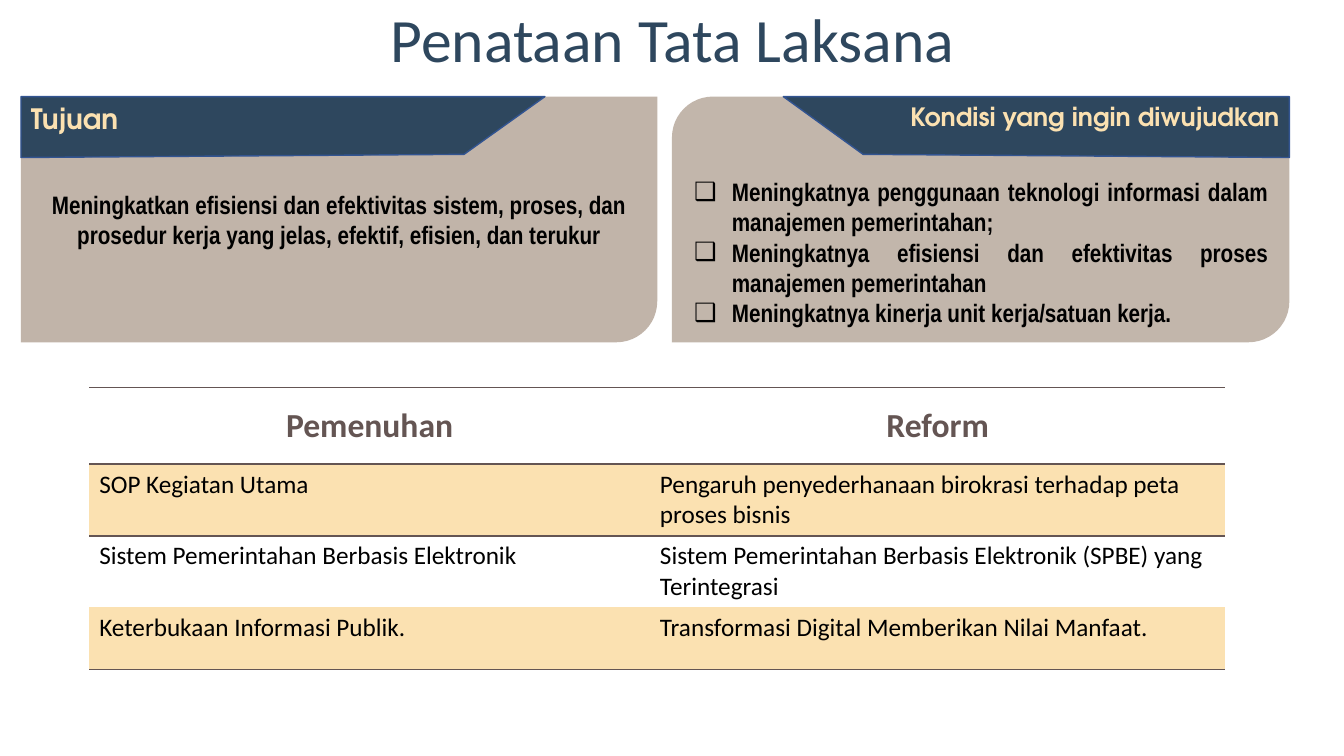
from lxml.etree import SubElement
from pptx import Presentation
from pptx.dml.color import RGBColor
from pptx.enum.shapes import MSO_SHAPE as Shape
from pptx.enum.text import MSO_ANCHOR as Anchor, MSO_AUTO_SIZE as AutoSize, PP_ALIGN as Align
from pptx.oxml.ns import qn
from pptx.util import Pt

PX = 9525  # EMU in one pixel
NAVY, CREAM, TAUPE, BROWN = "2E475E", "FBE1B1", "89705C", "645553"
BLUE, BLACK = "325491", "000000"
PANEL_TOP, PANEL_HEIGHT = 92, 234

GOALS = "Meningkatkan efisiensi dan efektivitas sistem, proses, dan prosedur kerja yang jelas, efektif, efisien, dan terukur"
CONDITIONS = [
    "Meningkatnya penggunaan teknologi informasi dalam manajemen pemerintahan;",
    "Meningkatnya efisiensi dan efektivitas proses manajemen pemerintahan",
    "Meningkatnya kinerja unit kerja/satuan kerja.",
]
ROWS = [
    ("Pemenuhan", "Reform"),
    ("SOP Kegiatan Utama", "Pengaruh penyederhanaan birokrasi terhadap peta proses bisnis"),
    ("Sistem Pemerintahan Berbasis Elektronik", "Sistem Pemerintahan Berbasis Elektronik (SPBE) yang Terintegrasi"),
    ("Keterbukaan Informasi Publik.", "Transformasi Digital Memberikan Nilai Manfaat."),
]
COLUMN_WIDTHS = [534, 548]
ROW_HEIGHTS = [73, 67, 67, 59]
RULE_WIDTHS = {0: 1, 1: 1, 2: 1.5, 4: 1}  # horizontal edge number: points


def color(value):
    return RGBColor.from_string(value)


def place(shape, left, top, width, height):
    shape.left, shape.top = left * PX, top * PX
    shape.width, shape.height = width * PX, height * PX


def style(paragraph, font_name, size, text_color, bold=False, align=Align.LEFT):
    paragraph.alignment = align
    font = paragraph.font
    font.name, font.size, font.bold = font_name, Pt(size), bold
    font.color.rgb = color(text_color)


def add_title(slide, text):
    title = slide.shapes.title
    place(title, 359, -4, 563, 81)
    frame = title.text_frame
    frame.text = text
    frame.word_wrap = False
    frame.auto_size = AutoSize.NONE
    frame.vertical_anchor = Anchor.TOP
    style(frame.paragraphs[0], "Calibri", 44, NAVY, align=Align.CENTER)


def add_panel(slide, left, width, opacity, text=""):
    panel = slide.shapes.add_shape(
        Shape.ROUND_2_DIAG_RECTANGLE, left * PX, PANEL_TOP * PX, width * PX, PANEL_HEIGHT * PX)
    panel.shadow.inherit = False
    panel.line.fill.background()
    panel.fill.solid()
    panel.fill.fore_color.rgb = color(TAUPE)
    fill_color = panel.fill._xPr.find(qn("a:solidFill"))[0]
    SubElement(fill_color, qn("a:alpha"), val=str(opacity * 1000))
    if text:
        panel.text_frame.text = text
        style(panel.text_frame.paragraphs[0], "Arial Narrow", 18, BLACK, True, Align.CENTER)


def add_ribbon(slide, points, text, size, align):
    builder = slide.shapes.build_freeform(*points[0], scale=PX)
    builder.add_line_segments(points[1:], close=True)
    ribbon = builder.convert_to_shape()
    ribbon.shadow.inherit = False
    ribbon.fill.solid()
    ribbon.fill.fore_color.rgb = color(NAVY)
    ribbon.line.color.rgb = color(BLUE)
    ribbon.line.width = Pt(1)
    ribbon.text_frame.text = text
    ribbon.text_frame.vertical_anchor = Anchor.TOP
    style(ribbon.text_frame.paragraphs[0], "TeX Gyre Adventor", size, CREAM, True, align)


def add_checklist(slide, items):
    body = slide.placeholders[1]
    place(body, 661, 168, 547, 144)
    slide.shapes._spTree.append(body._element)  # in front of the panel
    frame = body.text_frame
    frame.text = "\n".join(items)
    frame.auto_size = AutoSize.NONE
    frame.vertical_anchor = Anchor.MIDDLE
    frame.margin_left = frame.margin_right = frame.margin_top = frame.margin_bottom = 0
    for paragraph in frame.paragraphs:
        style(paragraph, "Arial Narrow", 18, BLACK, True, Align.JUSTIFY)
        paragraph.space_before = Pt(0)
        properties = paragraph._p.get_or_add_pPr()
        properties.set("marL", str(36 * PX))
        properties.set("indent", str(-36 * PX))
        SubElement(properties, qn("a:buChar"), char="❑")
        # bullet settings come before the default run properties
        properties.append(properties.find(qn("a:defRPr")))


def set_borders(cell, row):
    properties = cell._tc.get_or_add_tcPr()
    edges = {"L": 0, "R": 0, "T": RULE_WIDTHS.get(row, 0), "B": RULE_WIDTHS.get(row + 1, 0)}
    for side, width in edges.items():
        line = SubElement(properties, qn(f"a:ln{side}"), w=str(int(Pt(width))))
        if width:
            fill = SubElement(line, qn("a:solidFill"))
            SubElement(fill, qn("a:srgbClr"), val=BROWN)
        else:
            SubElement(line, qn("a:noFill"))


def add_table(slide, left, top):
    table = slide.shapes.add_table(
        len(ROWS), len(COLUMN_WIDTHS), left * PX, top * PX,
        sum(COLUMN_WIDTHS) * PX, sum(ROW_HEIGHTS) * PX).table
    table.first_row = table.horz_banding = False
    for column, width in zip(table.columns, COLUMN_WIDTHS):
        column.width = width * PX
    for row, texts in enumerate(ROWS):
        table.rows[row].height = ROW_HEIGHTS[row] * PX
        for column, text in enumerate(texts):
            cell = table.cell(row, column)
            set_borders(cell, row)
            cell.text = text
            paragraph = cell.text_frame.paragraphs[0]
            if row == 0:
                cell.vertical_anchor = Anchor.MIDDLE
                style(paragraph, "Calibri", 24, BROWN, True, Align.CENTER)
            else:
                style(paragraph, "Calibri", 18, BLACK)
            if row % 2:
                cell.fill.solid()
                cell.fill.fore_color.rgb = color(CREAM)
            else:
                cell.fill.background()


def main():
    presentation = Presentation()
    presentation.slide_width, presentation.slide_height = 1280 * PX, 720 * PX
    slide = presentation.slides.add_slide(presentation.slide_layouts[1])

    add_title(slide, "Penataan Tata Laksana")

    # Goals on the left, wanted conditions on the right
    add_panel(slide, 20, 606, 52, GOALS)
    add_panel(slide, 640, 588, 51)
    add_ribbon(slide, [(20, 92), (519, 92), (442, 147), (20, 150)], "Tujuan", 20, Align.LEFT)
    add_ribbon(slide, [(1228, 92), (746, 92), (822, 147), (1228, 150)],
               "Kondisi yang ingin diwujudkan", 18, Align.RIGHT)
    add_checklist(slide, CONDITIONS)

    # Fulfilment and reform table
    add_table(slide, 85, 369)

    presentation.save("out.pptx")


if __name__ == "__main__":
    main()
